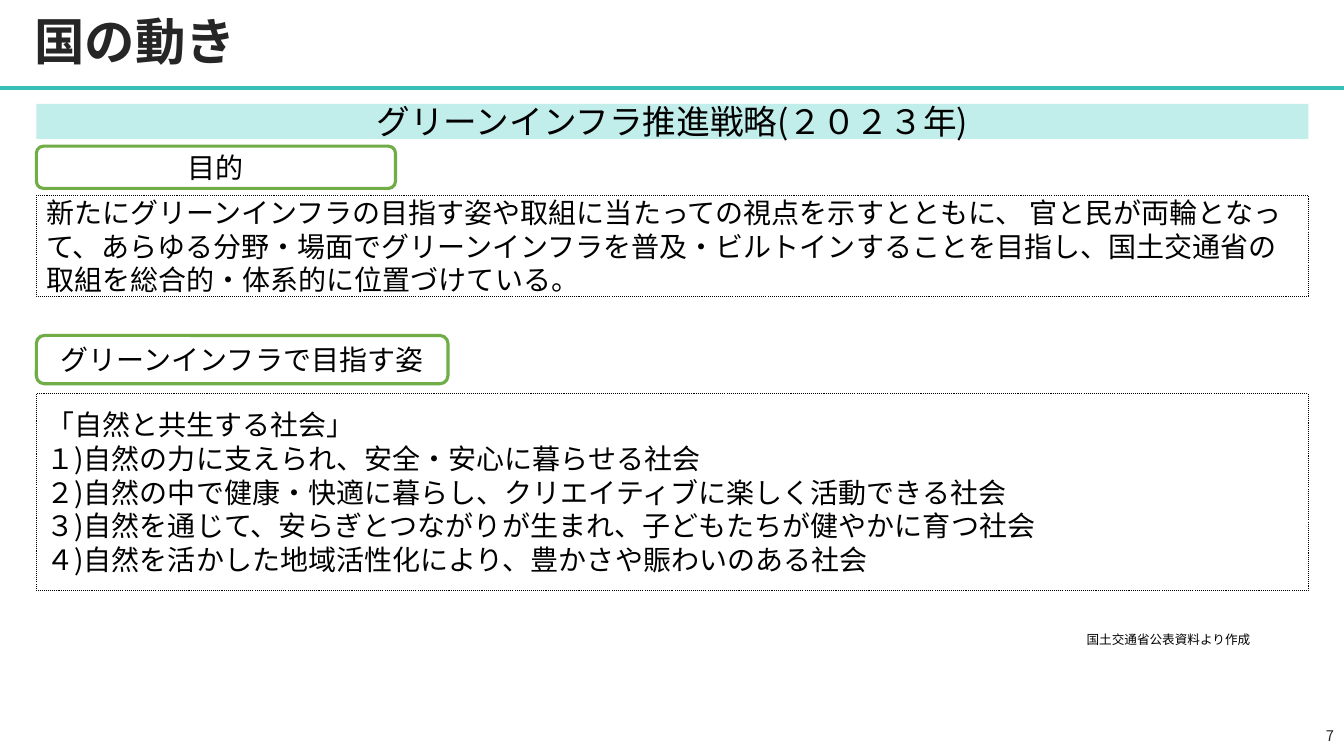
from dataclasses import dataclass

from lxml.etree import SubElement
from pptx import Presentation
from pptx.dml.color import RGBColor
from pptx.enum.dml import MSO_LINE_DASH_STYLE as Dash
from pptx.enum.shapes import MSO_CONNECTOR as Connector, MSO_SHAPE as Shape
from pptx.enum.text import MSO_ANCHOR as Anchor, PP_ALIGN as Align
from pptx.oxml.ns import qn
from pptx.util import Pt


@dataclass(frozen=True)
class Theme:
    font: str = "Noto Sans CJK JP"
    ink: str = "000000"
    heading: str = "262626"
    rule: str = "37BFB9"
    banner: str = "C1EDEB"
    label: str = "70AD47"
    title_size: float = 36
    banner_size: float = 24
    body_size: float = 20
    number_size: float = 10.5
    source_size: float = 9


THEME = Theme()
WIDTH, HEIGHT = 960, 540
TITLE_HEIGHT = 62.8
LEFT, CONTENT_WIDTH = 26, 908.6


def color(code):
    return RGBColor.from_string(code)


def write(shape, text, size, align=Align.LEFT, ink=THEME.ink, bold=False,
          anchor=Anchor.MIDDLE, spacing=None):
    frame = shape.text_frame
    frame.text = text
    frame.word_wrap = True
    frame.vertical_anchor = anchor
    for para in frame.paragraphs:
        para.alignment = align
        para.line_spacing = spacing
        for span in para.runs:
            font = span.font
            font.name, font.size, font.bold = THEME.font, Pt(size), bold
            font.color.rgb = color(ink)
            east_asian = SubElement(span._r.get_or_add_rPr(), qn("a:ea"))
            east_asian.set("typeface", THEME.font)


def add_text(page, box, text, size, **style):
    write(page.shapes.add_textbox(*map(Pt, box)), text, size, **style)


def add_block(page, kind, box, fill=None, line=None, weight=0.75, dash=None):
    block = page.shapes.add_shape(kind, *map(Pt, box))
    block.shadow.inherit = False
    if fill:
        block.fill.solid()
        block.fill.fore_color.rgb = color(fill)
    else:
        block.fill.background()
    if line:
        block.line.color.rgb = color(line)
        block.line.width = Pt(weight)
        block.line.dash_style = dash
    else:
        block.line.fill.background()
    return block


def add_header(page, box, title):
    left, top, width, height = box
    bottom = Pt(top + height)
    rule = page.shapes.add_connector(
        Connector.STRAIGHT, Pt(left), bottom, Pt(left + width), bottom)
    rule.line.color.rgb = color(THEME.rule)
    rule.line.width = Pt(3)
    SubElement(rule._element.spPr, qn("a:effectLst"))
    add_text(page, (left + 17.5, top, width - 36, height), title,
             THEME.title_size, ink=THEME.heading, bold=True, spacing=0.9)


def add_banner(page, box, text):
    banner = add_block(page, Shape.RECTANGLE, box, fill=THEME.banner)
    write(banner, text, THEME.banner_size, align=Align.CENTER)


def add_section(page, box, label, label_width, label_height, gap, text):
    left, top, width, height = box
    tag = add_block(page, Shape.ROUNDED_RECTANGLE,
                    (left, top, label_width, label_height),
                    line=THEME.label, weight=2.25)
    write(tag, label, THEME.body_size, align=Align.CENTER)
    offset = label_height + gap
    panel = add_block(page, Shape.RECTANGLE,
                      (left, top + offset, width, height - offset),
                      line=THEME.ink, dash=Dash.ROUND_DOT)
    write(panel, text, THEME.body_size, spacing=Pt(THEME.body_size * 1.2))


def add_footer(page, box, source, number):
    left, top, width, height = box
    right = left + width
    add_text(page, (right - 391, top, 331, 18), source, THEME.source_size,
             align=Align.RIGHT, anchor=Anchor.TOP,
             spacing=Pt(THEME.source_size * 1.2))
    add_text(page, (right - 216, top + height - 28.8, 216, 28.8), number,
             THEME.number_size, align=Align.RIGHT, ink=THEME.heading)


def main():
    deck = Presentation()
    deck.slide_width, deck.slide_height = Pt(WIDTH), Pt(HEIGHT)
    page = deck.slides.add_slide(deck.slide_layouts[6])
    add_header(page, (0, 0, WIDTH, TITLE_HEIGHT), "国の動き")
    add_banner(page, (LEFT, 74.2, CONTENT_WIDTH, 25),
               "グリーンインフラ推進戦略(２０２３年)")
    add_section(
        page, (LEFT, 104.4, CONTENT_WIDTH, 107.3), "目的", 256.5, 30.2, 5,
        "新たにグリーンインフラの目指す姿や取組に当たっての視点を示すとともに、 "
        "官と民が両輪となって、あらゆる分野・場面でグリーンインフラを普及・"
        "ビルトインすることを目指し、国土交通省の取組を総合的・体系的に位置づけている。")
    add_section(
        page, (LEFT, 239.6, CONTENT_WIDTH, 182.1),
        "グリーンインフラで目指す姿", 294, 34.5, 7,
        "\n".join((
            "「自然と共生する社会」",
            "１)自然の力に支えられ、安全・安心に暮らせる社会",
            "２)自然の中で健康・快適に暮らし、クリエイティブに楽しく活動できる社会",
            "３)自然を通じて、安らぎとつながりが生まれ、子どもたちが健やかに育つ社会",
            "４)自然を活かした地域活性化により、豊かさや賑わいのある社会",
        )))
    add_footer(page, (0, 448, WIDTH, 92), "国土交通省公表資料より作成", "7")
    deck.save("out.pptx")


if __name__ == "__main__":
    main()
